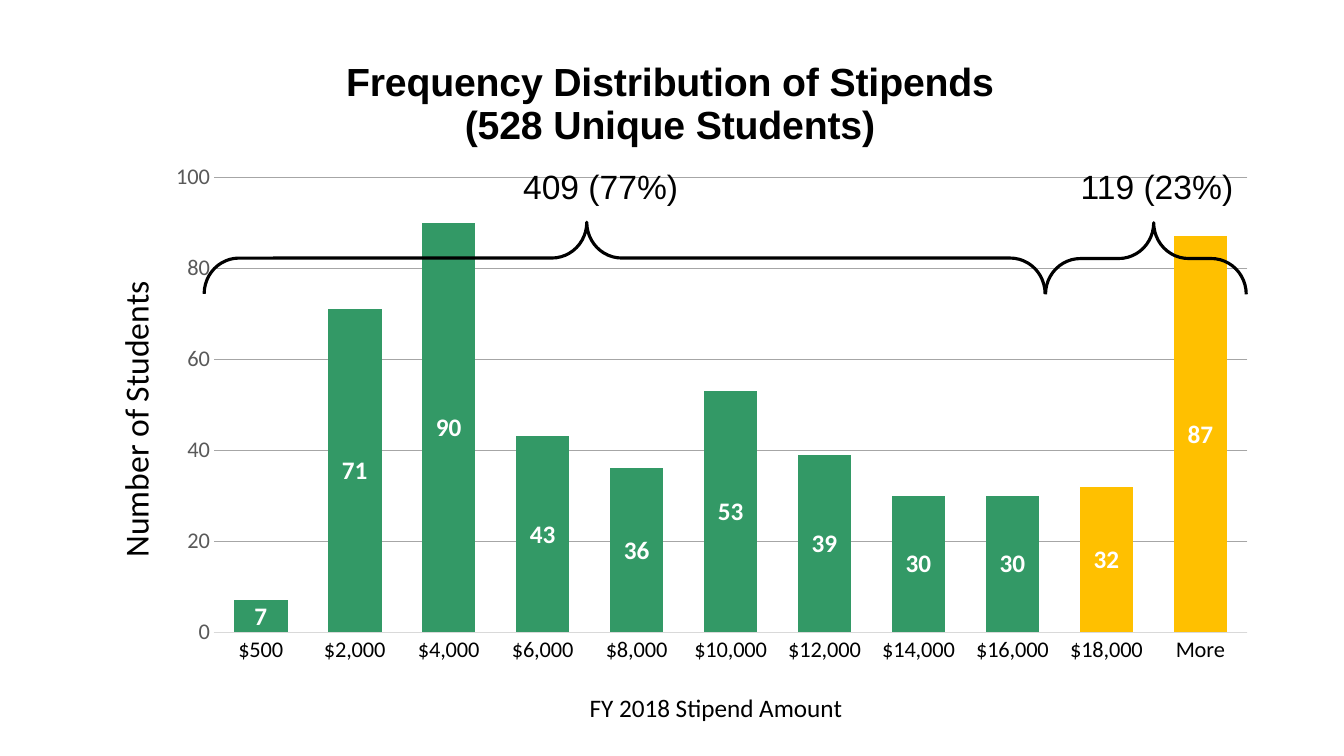
from pptx import Presentation
from pptx.chart.data import CategoryChartData
from pptx.dml.color import RGBColor
from pptx.enum.chart import XL_CHART_TYPE, XL_LABEL_POSITION, XL_TICK_MARK
from pptx.enum.shapes import MSO_SHAPE
from pptx.enum.text import MSO_AUTO_SIZE
from pptx.oxml import parse_xml
from pptx.oxml.ns import nsdecls, qn
from pptx.util import Pt

PX = 9144  # 100 px to the inch
BLACK = RGBColor(0, 0, 0)
WHITE = RGBColor(255, 255, 255)
GREEN = RGBColor(0x33, 0x99, 0x66)
AMBER = RGBColor(0xFF, 0xC0, 0x00)
TICK_GRAY = RGBColor(0x59, 0x59, 0x59)
GRID_GRAY = RGBColor(0xA6, 0xA6, 0xA6)
AXIS_GRAY = RGBColor(0xD9, 0xD9, 0xD9)

STUDENTS = {
    "$500": 7, "$2,000": 71, "$4,000": 90, "$6,000": 43, "$8,000": 36,
    "$10,000": 53, "$12,000": 39, "$14,000": 30, "$16,000": 30,
    "$18,000": 32, "More": 87,
}
HIGH_STIPENDS = ("$18,000", "More")


def set_font(font, **values):
    font.color.rgb = values.pop("color")
    for name, value in values.items():
        setattr(font, name, value)


def place(parent, index, **fractions):
    """Set a manual layout, in fractions of the chart."""
    for old in parent.findall(qn("c:layout")):
        parent.remove(old)
    target = '<c:layoutTarget val="inner"/>' if "w" in fractions else ""
    modes = "".join(f'<c:{key}Mode val="edge"/>' for key in "xy")
    sizes = "".join(f'<c:{key} val="{value}"/>' for key, value in fractions.items())
    parent.insert(index, parse_xml(
        f'<c:layout {nsdecls("c")}><c:manualLayout>{target}{modes}{sizes}'
        "</c:manualLayout></c:layout>"))


deck = Presentation()
deck.slide_width, deck.slide_height = 1333 * PX, 750 * PX
page = deck.slides.add_slide(deck.slide_layouts[6])

# Column chart
chart_data = CategoryChartData()
chart_data.categories = list(STUDENTS)
chart_data.add_series("Series 1", list(STUDENTS.values()))
chart = page.shapes.add_chart(
    XL_CHART_TYPE.COLUMN_CLUSTERED, 73 * PX, 33 * PX, 1188 * PX, 696 * PX, chart_data).chart
chart.has_legend = False
set_font(chart.font, name="Calibri", size=Pt(10), color=BLACK)
place(chart.plots[0]._element.getparent(), 0, x=0.12, y=0.2, w=0.86, h=0.65)
place(chart.plots[0]._element.getparent(), 0, x=0.117, y=0.205, w=0.863, h=0.649)

# Columns and their labels
plot = chart.plots[0]
plot.gap_width, plot.overlap, plot.vary_by_categories = 75, -27, False
series = plot.series[0]
series.format.fill.solid()
series.format.fill.fore_color.rgb = GREEN
for index, amount in enumerate(STUDENTS):
    if amount in HIGH_STIPENDS:
        fill = series.points[index].format.fill
        fill.solid()
        fill.fore_color.rgb = AMBER
labels = series.data_labels
labels.show_value = True
labels.position = XL_LABEL_POSITION.CENTER
set_font(labels.font, name="Calibri", size=Pt(18), bold=True, color=WHITE)

# Axes
amount_axis, student_axis = chart.category_axis, chart.value_axis
for axis, color in ((amount_axis, BLACK), (student_axis, TICK_GRAY)):
    axis.major_tick_mark = axis.minor_tick_mark = XL_TICK_MARK.NONE
    set_font(axis.tick_labels.font, name="Calibri", size=Pt(16), color=color)
amount_axis.format.line.color.rgb = AXIS_GRAY
amount_axis.format.line.width = Pt(0.75)
student_axis.format.line.fill.background()
student_axis.minimum_scale, student_axis.maximum_scale = 0, 100
student_axis.major_unit = 20
grid_line = student_axis.major_gridlines.format.line
grid_line.color.rgb, grid_line.width = GRID_GRAY, Pt(0.75)

# Chart and axis titles
chart.has_title = True
for title, lines, left, top, font in (
    (chart.chart_title, ("Frequency Distribution of Stipends", "(528 Unique Students)"),
     0.225, 0.034, {"name": "Arial", "size": Pt(28), "bold": True}),
    (amount_axis.axis_title, ("FY 2018 Stipend Amount",),
     0.427, 0.93, {"name": "Calibri", "size": Pt(18), "bold": False}),
    (student_axis.axis_title, ("Number of Students",),
     0.028, 0.345, {"name": "Calibri", "size": Pt(24), "bold": False}),
):
    frame = title.text_frame
    for index, line in enumerate(lines):
        para = frame.add_paragraph() if index else frame.paragraphs[0]
        span = para.add_run()
        span.text = line
        set_font(span.font, color=BLACK, **font)
    place(title._element, 1, x=left, y=top)
student_axis.axis_title._element.find(".//" + qn("a:bodyPr")).set("rot", "-5400000")

# Braces with the totals they span
for (left, top, height), tip, label, label_left, label_width in (
    ((584, -161, 834), 0.545, "409 (77%)", 509, 176),
    ((1101, 157, 199), 0.461, "119 (23%)", 1062, 173),
):
    brace = page.shapes.add_shape(
        MSO_SHAPE.LEFT_BRACE, left * PX, top * PX, 71 * PX, height * PX)
    brace.rotation = 90
    brace.adjustments[0], brace.adjustments[1] = 0.488, tip
    brace.fill.background()
    brace.line.color.rgb, brace.line.width = BLACK, Pt(2.25)
    brace.shadow.inherit = False

    box = page.shapes.add_textbox(label_left * PX, 160 * PX, label_width * PX, 50 * PX)
    box.text_frame.word_wrap = False
    box.text_frame.auto_size = MSO_AUTO_SIZE.SHAPE_TO_FIT_TEXT
    span = box.text_frame.paragraphs[0].add_run()
    span.text = label
    set_font(span.font, name="Arial", size=Pt(24), color=BLACK)

deck.save("out.pptx")
